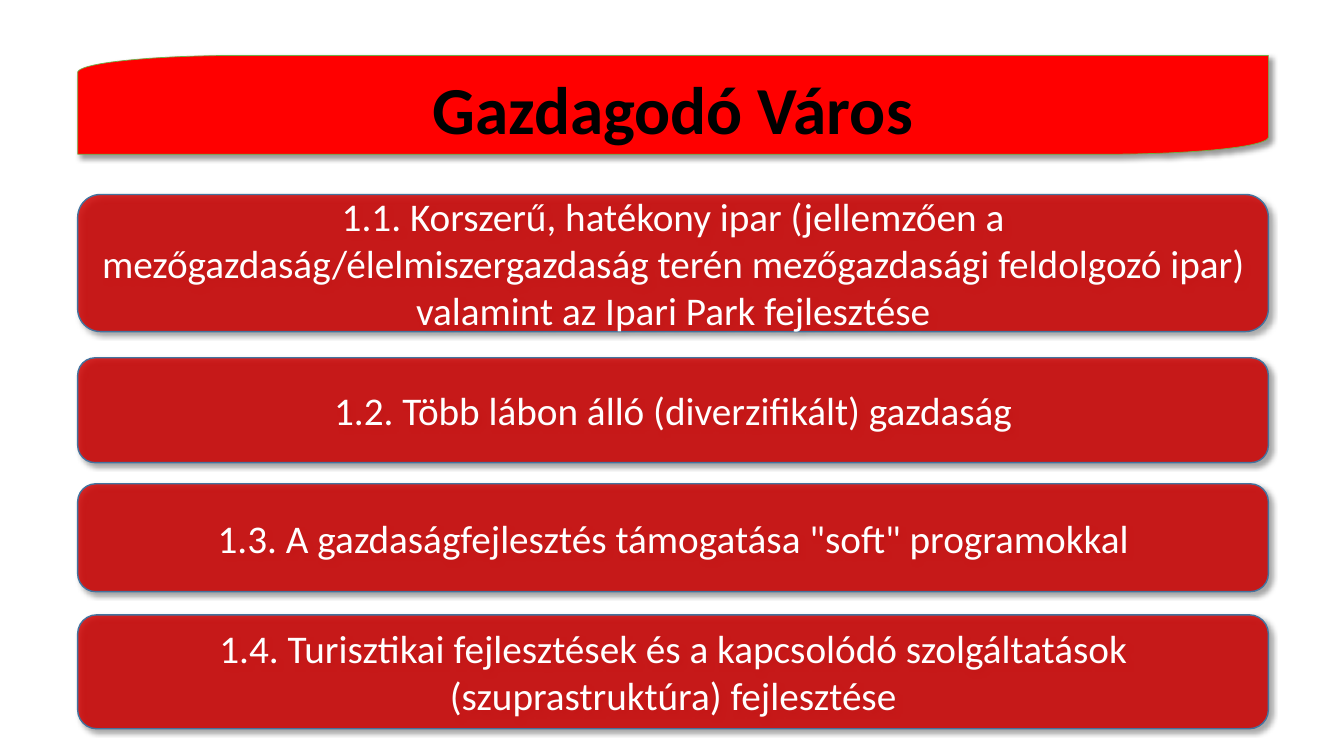
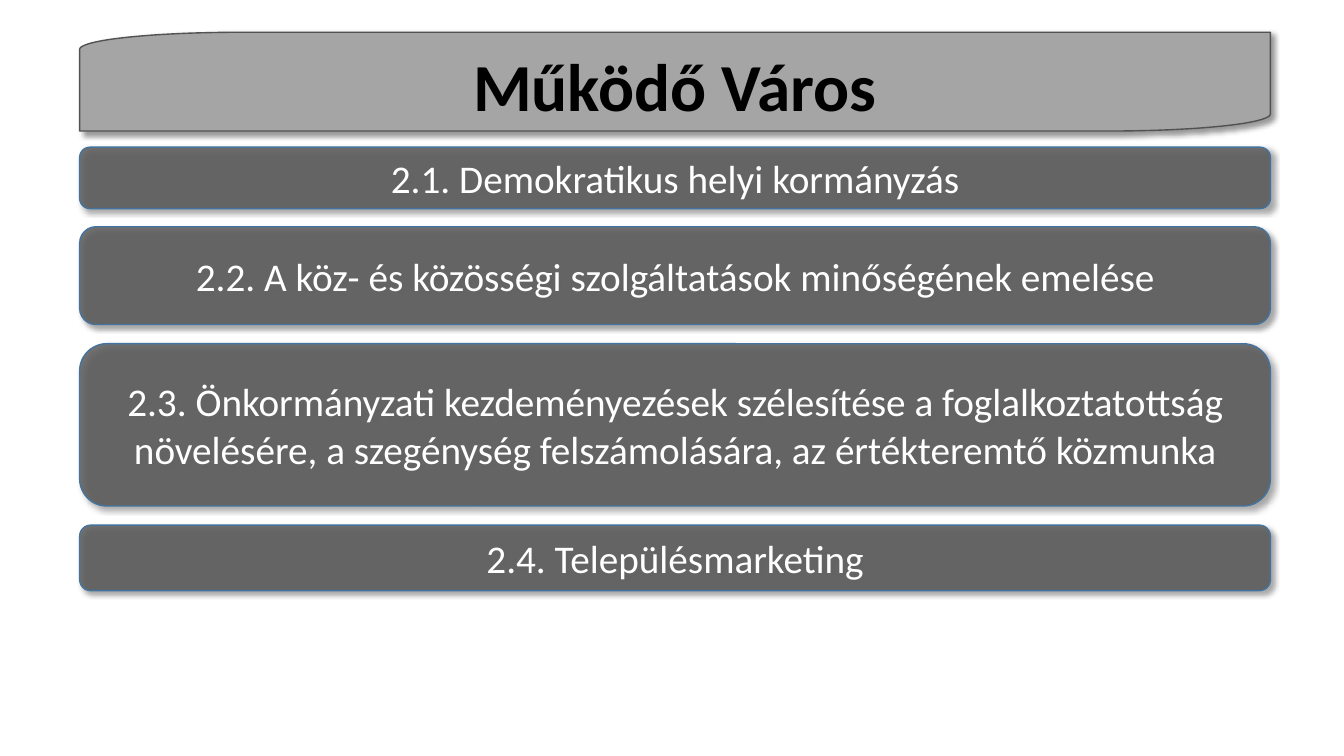
from math import cos, pi, sin

from lxml.etree import SubElement
from pptx import Presentation
from pptx.dml.color import RGBColor
from pptx.enum.shapes import MSO_SHAPE
from pptx.enum.text import MSO_ANCHOR, MSO_AUTO_SIZE, PP_ALIGN
from pptx.oxml.ns import qn
from pptx.util import Inches, Pt

FONT = "Calibri"
BLACK = RGBColor(0x00, 0x00, 0x00)
WHITE = RGBColor(0xFF, 0xFF, 0xFF)
BLUE = RGBColor(0x43, 0x73, 0x9E)
RED = RGBColor(0xFF, 0x00, 0x00)
DARK_RED = RGBColor(0xCC, 0x00, 0x00)
GREEN = RGBColor(0x70, 0xAD, 0x47)
GREY = RGBColor(0xA5, 0xA5, 0xA5)
DARK_GREY = RGBColor(0x59, 0x59, 0x59)
OUTLINE_GREY = RGBColor(0x52, 0x52, 0x52)

COLUMN_WIDTH = 11.81
BANNER_HEIGHT = 0.98
CURVE_WIDTH, CURVE_HEIGHT = 1.61, 0.17
CURVE_STEPS = 24

TOPICS = [
    {
        "title": "Gazdagodó Város",
        "left": 0.77, "top": 0.55,
        "banner": (RED, GREEN, 0.5),
        "row_fill": DARK_RED,
        "rows": [
            (1.93, 1.36, "1.1. Korszerű, hatékony ipar (jellemzően a "
             "mezőgazdaság/élelmiszergazdaság terén mezőgazdasági feldolgozó ipar) "
             "valamint az Ipari Park fejlesztése"),
            (3.55, 1.04, "1.2. Több lábon álló (diverzifikált) gazdaság"),
            (4.8, 1.07, "1.3. A gazdaságfejlesztés támogatása \"soft\" programokkal"),
            (6.1, 1.13, "1.4. Turisztikai fejlesztések és a kapcsolódó szolgáltatások "
             "(szuprastruktúra) fejlesztése"),
        ],
    },
    {
        "title": "Működő Város",
        "left": 0.79, "top": 0.32,
        "banner": (GREY, OUTLINE_GREY, 1),
        "row_fill": DARK_GREY,
        "rows": [
            (1.46, 0.61, "2.1. Demokratikus helyi kormányzás"),
            (2.25, 0.97, "2.2. A köz- és közösségi szolgáltatások minőségének emelése"),
            (3.41, 1.61, "2.3. Önkormányzati kezdeményezések szélesítése a "
             "foglalkoztatottság növelésére, a szegénység felszámolására, "
             "az értékteremtő közmunka"),
            (5.21, 0.65, "2.4. Településmarketing"),
        ],
    },
]


def set_alpha(color, percent):
    SubElement(color, qn("a:alpha"), val=str(percent * 1000))


def paint(shape, fill, line, line_width):
    shape.fill.solid()
    shape.fill.fore_color.rgb = fill
    shape.line.color.rgb = line
    shape.line.width = Pt(line_width)
    shape.shadow.inherit = False
    effects = shape.element.spPr.find(qn("a:effectLst"))
    shadow = SubElement(effects, qn("a:outerShdw"), blurRad=str(Pt(4)),
                        dist=str(Pt(3)), dir=str(45 * 60000),
                        algn="tl", rotWithShape="0")
    set_alpha(SubElement(shadow, qn("a:srgbClr"), val=str(BLACK)), 40)


def write(shape, text, size, color, bold=False):
    frame = shape.text_frame
    frame.word_wrap = True
    frame.auto_size = MSO_AUTO_SIZE.NONE
    frame.vertical_anchor = MSO_ANCHOR.MIDDLE
    para = frame.paragraphs[0]
    para.alignment = PP_ALIGN.CENTER
    span = para.add_run()
    span.text = text
    span.font.name = FONT
    span.font.size = Pt(size)
    span.font.bold = bold
    span.font.color.rgb = color
    return para


def banner_outline(left, top, width, height):
    right, bottom = left + width, top + height
    angles = [pi / 2 * step / CURVE_STEPS for step in range(CURVE_STEPS + 1)]
    curve = [(CURVE_WIDTH * (1 - cos(angle)), CURVE_HEIGHT * (1 - sin(angle)))
             for angle in angles]
    upper_left = [(left + x, top + y) for x, y in curve]
    lower_right = [(right - x, bottom - y) for x, y in curve]
    points = upper_left + [(right, top)] + lower_right + [(left, bottom)]
    return [(Inches(x), Inches(y)) for x, y in points]


def add_banner(page, box, text, style):
    start, *others = banner_outline(*box)
    builder = page.shapes.build_freeform(*start)
    builder.add_line_segments(others, close=True)
    banner = builder.convert_to_shape()
    paint(banner, *style)

    title = page.shapes.title
    title.left, title.top, title.width, title.height = map(Inches, box)
    para = write(title, text, 48, BLACK, bold=True)
    para.line_spacing = 1.07
    para.space_after = Pt(8)
    banner.element.addnext(title.element)


def add_row(page, box, text, fill):
    row = page.shapes.add_shape(MSO_SHAPE.ROUNDED_RECTANGLE, *map(Inches, box))
    paint(row, fill, BLUE, 1)
    set_alpha(row.element.spPr.find(qn("a:solidFill"))[0], 85)
    write(row, text, 28, WHITE)


def add_topic(deck, topic):
    page = deck.slides.add_slide(deck.slide_layouts.get_by_name("Title Only"))
    left = topic["left"]
    add_banner(page, (left, topic["top"], COLUMN_WIDTH, BANNER_HEIGHT),
               topic["title"], topic["banner"])
    for top, height, text in topic["rows"]:
        add_row(page, (left, top, COLUMN_WIDTH, height), text, topic["row_fill"])


def main():
    deck = Presentation()
    deck.slide_width, deck.slide_height = Inches(13.33), Inches(7.5)
    for topic in TOPICS:
        add_topic(deck, topic)
    deck.save("out.pptx")


if __name__ == "__main__":
    main()
